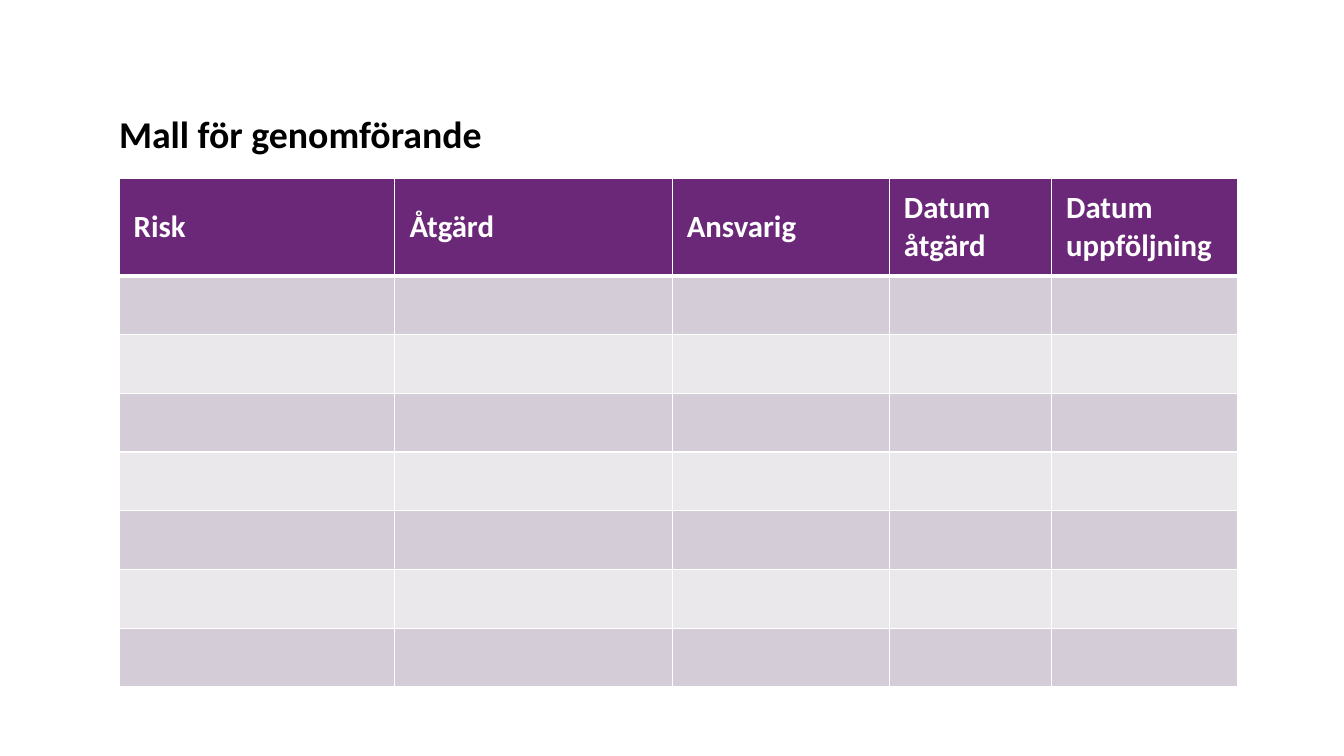
from dataclasses import dataclass

from lxml import etree
from pptx import Presentation
from pptx import util as u
from pptx.dml.color import RGBColor
from pptx.enum import text
from pptx.oxml import ns

FONT = "Calibri"
BLACK = RGBColor(0x00, 0x00, 0x00)
WHITE = RGBColor(0xFF, 0xFF, 0xFF)
PURPLE = RGBColor(0x6B, 0x28, 0x79)
DARK_BAND = RGBColor(0xD4, 0xCD, 0xD7)
LIGHT_BAND = RGBColor(0xEB, 0xE8, 0xEC)

LEFT = u.Cm(3)
HEADER_HEIGHT = u.Cm(2.45)
BODY_HEIGHT = u.Cm(1.48)
BODY_ROWS = 7
THIN, THICK = u.Pt(1), u.Pt(3)


@dataclass(frozen=True)
class Column:
    lines: tuple[str, ...]
    width: float


COLUMNS = (
    Column(("Risk",), 6.95),
    Column(("Åtgärd",), 6.99),
    Column(("Ansvarig",), 5.47),
    Column(("Datum", "åtgärd"), 4.09),
    Column(("Datum uppföljning",), 4.7),
)


def add_run(p, content: str, size: int, color: RGBColor) -> None:
    r = p.add_run()
    r.text = content
    r.font.name = FONT
    r.font.size = u.Pt(size)
    r.font.bold = True
    r.font.color.rgb = color


def style_cell(cell, fill: RGBColor, top: int, bottom: int) -> None:
    tc_pr = cell._tc.get_or_add_tcPr()
    for side, width in (("L", THIN), ("R", THIN), ("T", top), ("B", bottom)):
        ln = etree.SubElement(tc_pr, ns.qn(f"a:ln{side}"), w=str(width))
        solid = etree.SubElement(ln, ns.qn("a:solidFill"))
        etree.SubElement(solid, ns.qn("a:srgbClr"), val=str(WHITE))
    cell.fill.solid()
    cell.fill.fore_color.rgb = fill


def fill_header(cell, lines: tuple[str, ...]) -> None:
    cell.vertical_anchor = text.MSO_ANCHOR.MIDDLE
    cell.margin_left = u.Cm(0.37)
    cell.margin_right = u.Cm(0.3)
    cell.margin_top = cell.margin_bottom = u.Cm(0.28)
    p = cell.text_frame.paragraphs[0]
    for i, line in enumerate(lines):
        if i:
            p.add_line_break()
        add_run(p, line, 22, WHITE)


def add_title(s) -> None:
    tf = s.shapes.add_textbox(LEFT, u.Cm(2.92), u.Cm(25), u.Cm(1.12)).text_frame
    tf.word_wrap = True
    tf.margin_left = tf.margin_top = tf.margin_right = tf.margin_bottom = 0
    p = tf.paragraphs[0]
    p.line_spacing = 0.9
    add_run(p, "Mall för genomförande", 27, BLACK)


def add_plan_table(s) -> None:
    width = u.Cm(sum(column.width for column in COLUMNS))
    height = HEADER_HEIGHT + BODY_ROWS * BODY_HEIGHT
    table = s.shapes.add_table(
        BODY_ROWS + 1, len(COLUMNS), LEFT, u.Cm(4.5), width, height
    ).table
    for i, row in enumerate(table.rows):
        row.height = BODY_HEIGHT if i else HEADER_HEIGHT
        band = DARK_BAND if i % 2 else LIGHT_BAND
        for cell in row.cells:
            style_cell(
                cell,
                band if i else PURPLE,
                THICK if i == 1 else THIN,
                THIN if i else THICK,
            )
    for i, column in enumerate(COLUMNS):
        table.columns[i].width = u.Cm(column.width)
        fill_header(table.cell(0, i), column.lines)


def main() -> None:
    prs = Presentation()
    prs.slide_width, prs.slide_height = u.Cm(33.87), u.Cm(19.05)
    s = prs.slides.add_slide(prs.slide_layouts[6])
    add_title(s)
    add_plan_table(s)
    prs.save("out.pptx")


if __name__ == "__main__":
    main()
